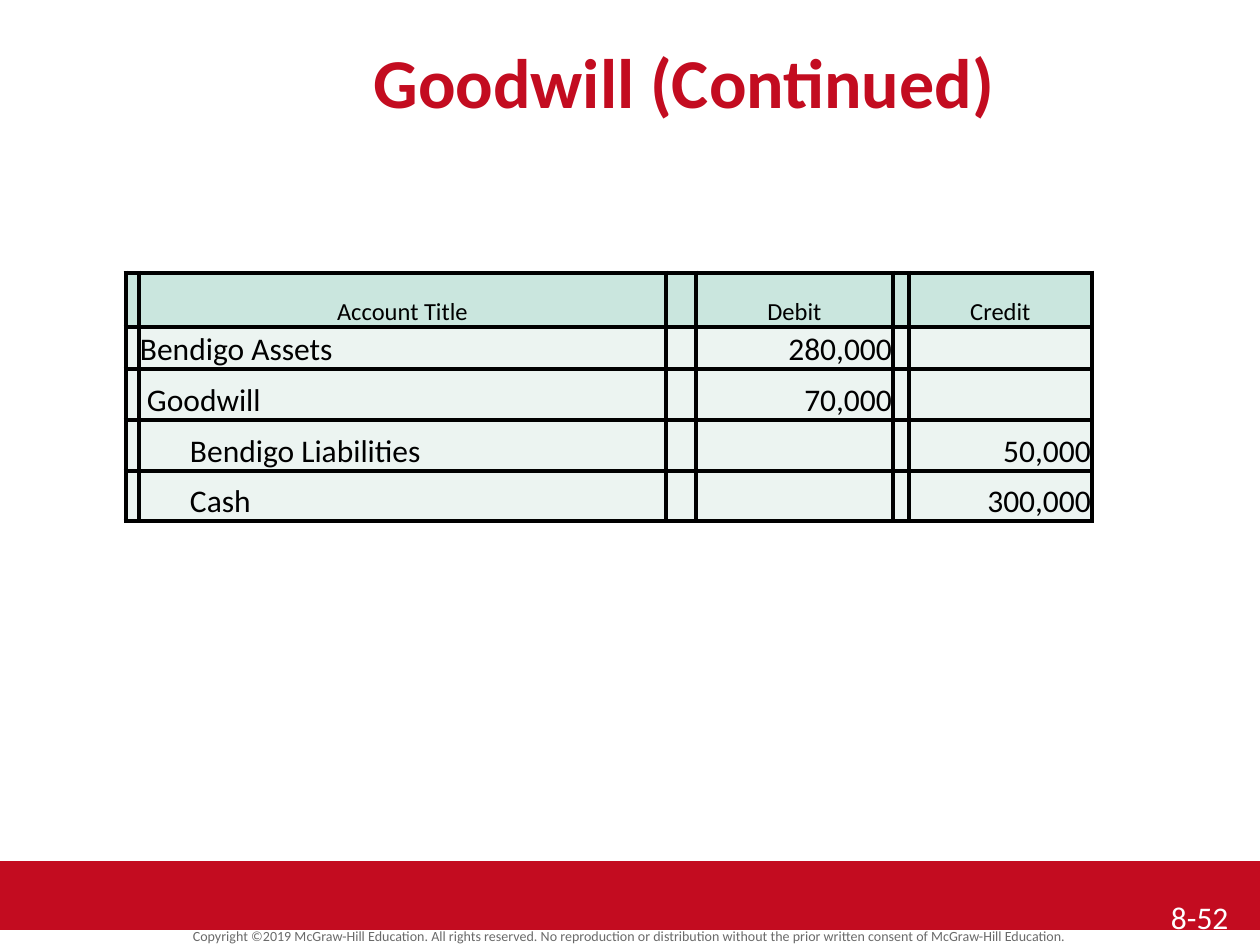
from dataclasses import dataclass

from lxml.etree import SubElement
from pptx import Presentation
from pptx.dml.color import RGBColor
from pptx.enum.shapes import MSO_SHAPE
from pptx.enum.text import MSO_ANCHOR, PP_ALIGN
from pptx.oxml.ns import qn
from pptx.util import Emu, Pt

SCALE = 914400 / 126
LEFT, MID, RIGHT = PP_ALIGN.LEFT, PP_ALIGN.CENTER, PP_ALIGN.RIGHT


@dataclass(frozen=True)
class Theme:
    font: str = "Calibri"
    red: str = "C30C20"
    gray: str = "6A6A6A"
    black: str = "000000"
    white: str = "FFFFFF"
    head: str = "CAE6DE"
    body: str = "ECF4F1"
    title: int = 40
    text: int = 18
    label: int = 14
    note: int = 8
    rule: int = 3


def px(n):
    return Emu(round(n * SCALE))


def border(cell, color, width):
    """Draw all four sides; call before the cell gets its fill."""
    props = cell._tc.get_or_add_tcPr()
    for side in ("a:lnL", "a:lnR", "a:lnT", "a:lnB"):
        line = SubElement(props, qn(side), w=str(Pt(width)))
        fill = SubElement(line, qn("a:solidFill"))
        SubElement(fill, qn("a:srgbClr"), val=color)


class Page:
    def __init__(self, slide, theme):
        self.slide, self.theme = slide, theme

    def add_run(self, para, text, size, color, align=LEFT, bold=False):
        para.alignment = align
        run = para.add_run()
        run.text = text
        font = run.font
        font.name, font.size, font.bold = self.theme.font, Pt(size), bold
        font.color.rgb = RGBColor.from_string(color)

    def band(self, box, color):
        shape = self.slide.shapes.add_shape(MSO_SHAPE.RECTANGLE, *map(px, box))
        shape.shadow.inherit = False
        shape.fill.solid()
        shape.fill.fore_color.rgb = RGBColor.from_string(color)
        shape.line.fill.background()

    def text(self, box, text, size, color, align=LEFT, bold=False,
             left=13, right=13, space=1.0):
        frame = self.slide.shapes.add_textbox(*map(px, box)).text_frame
        frame.word_wrap = True
        frame.margin_left, frame.margin_right = px(left), px(right)
        para = frame.paragraphs[0]
        para.line_spacing = space
        self.add_run(para, text, size, color, align, bold)

    def table(self, spot, cols, rows, data):
        """Fill a grid from data: (row, col) -> (text, align, indent)."""
        look = self.theme
        size = sum(cols), sum(rows)
        grid = self.slide.shapes.add_table(
            len(rows), len(cols), *map(px, spot + size)).table
        for col, width in zip(grid.columns, cols):
            col.width = px(width)
        for r, height in enumerate(rows):
            grid.rows[r].height = px(height)
            for c in range(len(cols)):
                cell = grid.cell(r, c)
                text, align, indent = data.get((r, c), ("", LEFT, 0))
                border(cell, look.black, look.rule)
                cell.fill.solid()
                cell.fill.fore_color.rgb = RGBColor.from_string(
                    look.body if r else look.head)
                cell.vertical_anchor = MSO_ANCHOR.BOTTOM
                cell.margin_left = px(1 + indent)
                cell.margin_right = cell.margin_top = px(1)
                cell.margin_bottom = 0
                if text:
                    self.add_run(cell.text_frame.paragraphs[0], text,
                                 look.text if r else look.label,
                                 look.black, align)


def main():
    deck = Presentation()
    deck.slide_width, deck.slide_height = px(1260), px(945)
    look = Theme()
    page = Page(deck.slides.add_slide(deck.slide_layouts[6]), look)

    page.band((0, 861, 1260, 69), look.red)
    page.text((0, 925, 1260, 24),
              "Copyright ©2019 McGraw-Hill Education. All rights reserved. "
              "No reproduction or distribution without the prior written "
              "consent of McGraw-Hill Education.",
              look.note, look.gray, MID, space=0.8)
    page.text((126, 32, 1134, 84), "Goodwill (Continued)",
              look.title, look.red, MID, bold=True, right=31)
    page.text((1144, 892, 116, 53), "8-52", look.text, look.white,
              left=27, right=0)

    name, debit, credit = 1, 3, 5
    data = {
        (0, name): ("Account Title", MID, 0),
        (0, debit): ("Debit", MID, 0),
        (0, credit): ("Credit", MID, 0),
    }
    entries = [
        ("Bendigo Assets", 0, debit, "280,000"),
        ("Goodwill", 7, debit, "70,000"),
        ("Bendigo Liabilities", 50, credit, "50,000"),
        ("Cash", 50, credit, "300,000"),
    ]
    for row, (title, indent, side, total) in enumerate(entries, 1):
        data[row, name] = title, LEFT, indent
        data[row, side] = total, RIGHT, 0
    page.table((126, 273), (13, 527, 30, 197, 16, 183),
               (54, 42, 51, 51, 50), data)

    deck.save("out.pptx")


if __name__ == "__main__":
    main()
